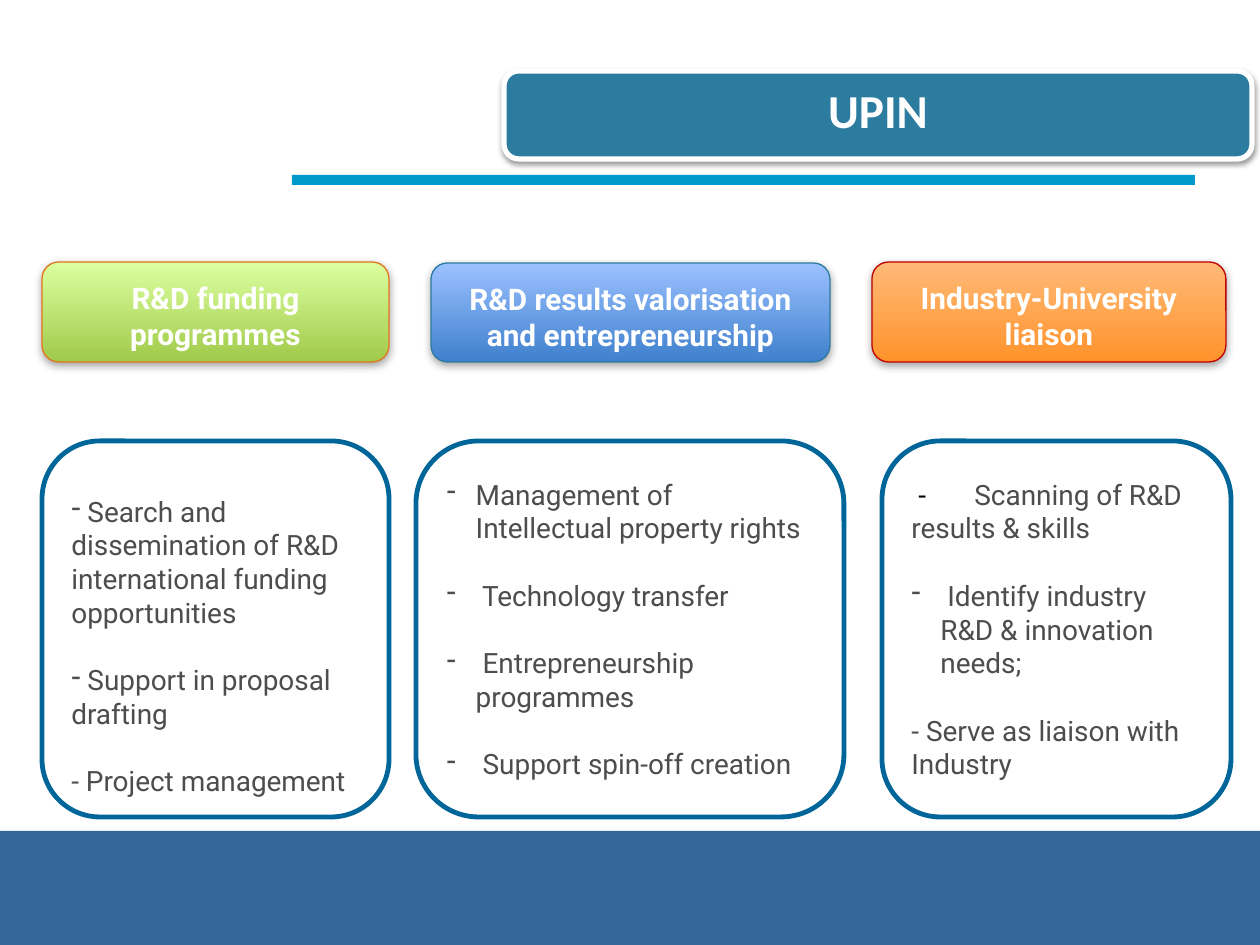
"""Build the UPIN slide: a title, three service headings and their details."""
from lxml import etree
from pptx import Presentation
from pptx.dml.color import RGBColor
from pptx.enum.shapes import MSO_SHAPE
from pptx.enum.text import MSO_ANCHOR, PP_ALIGN
from pptx.oxml.ns import qn
from pptx.util import Emu, Pt

RECT, ROUNDED = MSO_SHAPE.RECTANGLE, MSO_SHAPE.ROUNDED_RECTANGLE
TOP, MIDDLE = MSO_ANCHOR.TOP, MSO_ANCHOR.MIDDLE
LEFT, CENTER = PP_ALIGN.LEFT, PP_ALIGN.CENTER
PX_PER_INCH = 126

TITLE_FONT = {"name": "Calibri", "size": Pt(27), "bold": True}
HEADING_FONT = {"name": "Roboto", "size": Pt(17), "bold": True}
DETAIL_FONT = {"name": "Roboto", "size": Pt(16), "bold": False}
WHITE, GREY, BLACK = "FFFFFF", "4D4D4D", "000000"
HANG = 29
LINE_GAP = 34

HEADINGS = [
    ("Industry-University liaison", (872, 262, 354, 100), "FF932B", "FFB977", "C00000"),
    ("R&D results valorisation and entrepreneurship", (431, 263, 399, 99),
     "3F80CD", "9BC1FF", "2C7C9F"),
    ("R&D funding programmes", (42, 262, 347, 100), "A0CA4A", "DCFFA0", "E2751D"),
]

# Each detail: bullet hang in px (None for a typed dash), then its coloured runs.
DETAILS = [
    ((416, 441, 428, 376), 6, [
        (HANG, [("Management of Intellectual property rights", GREY)]),
        (HANG, [(" Technology transfer", GREY)]),
        (HANG, [(" Entrepreneurship programmes", GREY)]),
        (HANG, [(" Support spin-off creation", GREY)]),
    ]),
    ((882, 441, 349, 376), 6, [
        (None, [("-\t", BLACK), ("Scanning of R&D results & skills", GREY)]),
        (HANG, [(" Identify industry R&D & innovation needs;", GREY)]),
        (None, [("- Serve as liaison with Industry", GREY)]),
    ]),
    ((42, 441, 347, 376), 6 + LINE_GAP, [
        (0, [(" Search and dissemination of R&D international funding opportunities", GREY)]),
        (0, [(" Support in proposal drafting", GREY)]),
        (None, [("- Project management", GREY)]),
    ]),
]


def px(length):
    """Turn pixels into EMU."""
    return Emu(round(length * 914400 / PX_PER_INCH))


def rgb(value):
    """Turn a hex string into a colour."""
    return RGBColor.from_string(value)


def add_panel(slide, kind, box, fill=None, line=None, width=0):
    """Add a shape with an optional solid fill and outline."""
    panel = slide.shapes.add_shape(kind, *map(px, box))
    panel.shadow.inherit = False
    if fill:
        panel.fill.solid()
        panel.fill.fore_color.rgb = rgb(fill)
    if line:
        panel.line.color.rgb = rgb(line)
        panel.line.width = Pt(width)
    else:
        panel.line.fill.background()
    return panel


def add_shadow(panel, opacity, blur, distance):
    """Give a panel a black shadow that falls straight down."""
    effects = panel._element.spPr.find(qn("a:effectLst"))
    shadow = etree.SubElement(effects, qn("a:outerShdw"), blurRad=str(Pt(blur)),
                              dist=str(Pt(distance)), dir="5400000", rotWithShape="0")
    colour = etree.SubElement(shadow, qn("a:srgbClr"), val=BLACK)
    etree.SubElement(colour, qn("a:alpha"), val=str(opacity * 1000))


def set_frame(panel, anchor, **margins):
    """Wrap the text of a panel and set its anchor and margins in px."""
    frame = panel.text_frame
    frame.word_wrap = True
    frame.vertical_anchor = anchor
    for side, length in margins.items():
        setattr(frame, f"margin_{side}", px(length))
    return frame


def add_runs(paragraph, runs, font, align):
    """Write coloured runs in one font."""
    paragraph.alignment = align
    for text, colour in runs:
        run = paragraph.add_run()
        run.text = text
        run.font.color.rgb = rgb(colour)
        for name, value in font.items():
            setattr(run.font, name, value)


def set_bullet(paragraph, hang):
    """Give a paragraph a dash bullet with a hanging indent."""
    properties = paragraph._p.get_or_add_pPr()
    properties.set("marL", str(px(hang)))
    properties.set("indent", str(-px(hang)))
    etree.SubElement(properties, qn("a:buChar"), char="-")


def set_tab(paragraph, first_indent, stop):
    """Indent the first line and put a tab stop after its dash."""
    properties = paragraph._p.get_or_add_pPr()
    properties.set("marL", "0")
    properties.set("indent", str(px(first_indent)))
    tabs = etree.SubElement(properties, qn("a:tabLst"))
    etree.SubElement(tabs, qn("a:tab"), pos=str(px(stop)), algn="l")


def add_heading(slide, text, box, bottom, top, line):
    """Add a heading with a gradient that lightens upwards."""
    heading = add_panel(slide, ROUNDED, box, line=line, width=0.75)
    heading.fill.gradient()
    heading.fill.gradient_angle = 90
    for stop, colour, position in zip(heading.fill.gradient_stops, (bottom, top), (0, 1)):
        stop.color.rgb = rgb(colour)
        stop.position = position
    add_shadow(heading, 35, 5, 1.8)
    frame = set_frame(heading, TOP, left=13, top=13, right=13, bottom=13)
    add_runs(frame.paragraphs[0], [(text, WHITE)], HEADING_FONT, CENTER)


def add_details(slide, box, top_margin, items):
    """Add an outlined card that lists the details of one service."""
    card = add_panel(slide, ROUNDED, box, WHITE, "006699", 2.75)
    frame = set_frame(card, MIDDLE, top=top_margin)
    for index, (hang, runs) in enumerate(items):
        paragraph = frame.add_paragraph() if index else frame.paragraphs[0]
        if hang is not None:
            set_bullet(paragraph, hang)
        elif len(runs) > 1:
            set_tab(paragraph, 7, HANG)
        if index:
            paragraph.space_before = px(LINE_GAP)
        add_runs(paragraph, runs, DETAIL_FONT, LEFT)


def add_title(slide, text):
    """Add the title plate."""
    plate = add_panel(slide, ROUNDED, (504, 71, 748, 88), "2C7C9F", WHITE, 3)
    add_shadow(plate, 38, 3.1, 1.6)
    frame = set_frame(plate, TOP)
    add_runs(frame.paragraphs[0], [(text, WHITE)], TITLE_FONT, CENTER)


def main():
    """Build and save the slide."""
    deck = Presentation()
    deck.slide_width, deck.slide_height = px(1260), px(945)
    slide = deck.slides.add_slide(deck.slide_layouts[6])
    add_panel(slide, RECT, (292, 175, 903, 10), "0099CC")
    add_panel(slide, RECT, (0, 831, 1260, 114), "336699")
    for heading in HEADINGS:
        add_heading(slide, *heading)
    for details in DETAILS:
        add_details(slide, *details)
    add_title(slide, "UPIN")
    deck.save("out.pptx")


if __name__ == "__main__":
    main()
